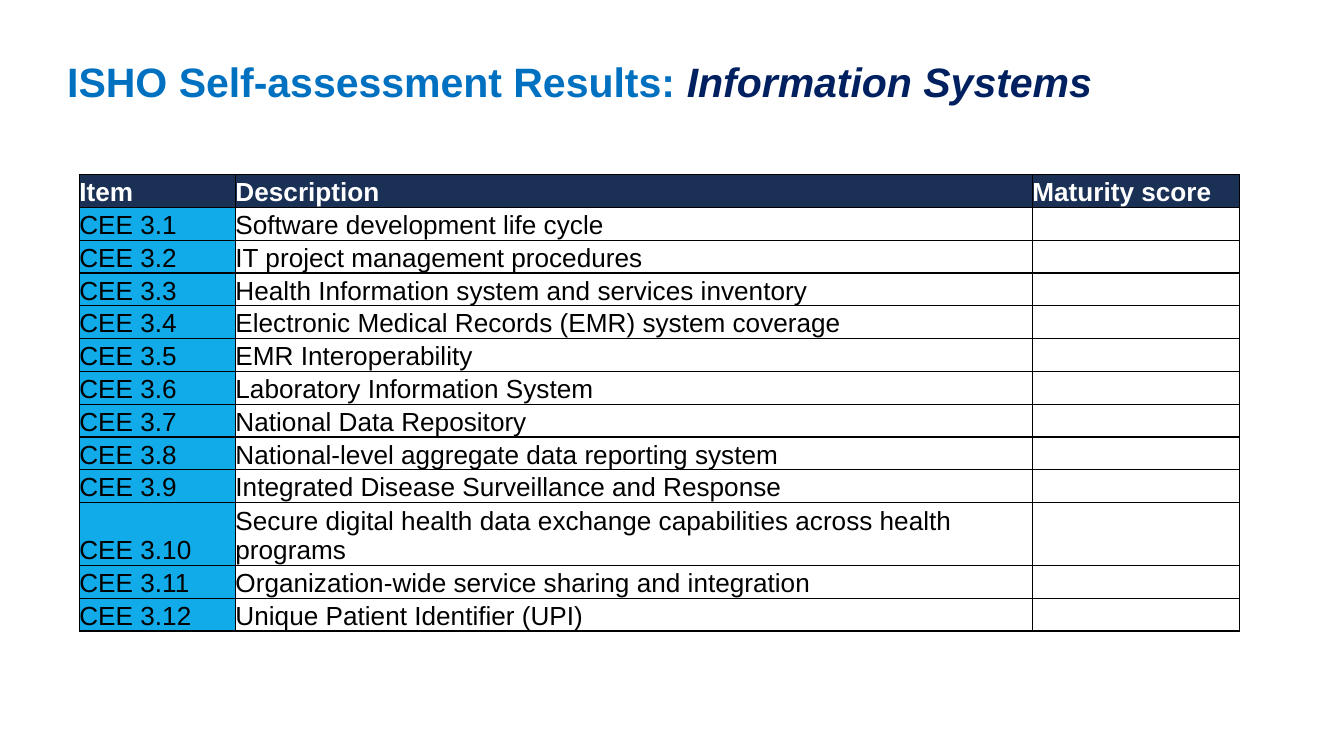
from dataclasses import dataclass

from lxml.etree import SubElement
from pptx import Presentation
from pptx.dml.color import RGBColor
from pptx.enum.text import MSO_ANCHOR
from pptx.oxml.ns import qn
from pptx.util import Cm, Pt


@dataclass(frozen=True)
class Theme:
    font: str = "Arial"
    title_size: int = 22
    table_size: int = 14
    title: str = "0070C0"
    topic: str = "002060"
    header: str = "1A3055"
    item: str = "11ABE9"
    white: str = "FFFFFF"
    black: str = "000000"
    border: float = 0.75
    outer_border: float = 1


THEME = Theme()
HEADINGS = ("Item", "Description", "Maturity score")
DESCRIPTIONS = (
    "Software development life cycle",
    "IT project management procedures",
    "Health Information system and services inventory",
    "Electronic Medical Records (EMR) system coverage",
    "EMR Interoperability",
    "Laboratory Information System",
    "National Data Repository",
    "National-level aggregate data reporting system",
    "Integrated Disease Surveillance and Response",
    "Secure digital health data exchange capabilities across health programs",
    "Organization-wide service sharing and integration",
    "Unique Patient Identifier (UPI)",
)
COLUMN_WIDTHS = (2.95, 15.06, 3.91)
ROW_HEIGHT = 0.62


def set_font(font, size, color, bold):
    font.name = THEME.font
    font.size = Pt(size)
    font.bold = bold
    font.color.rgb = RGBColor.from_string(color)


def add_title(slide, title, topic):
    box = slide.shapes.add_textbox(Cm(1.09), Cm(-0.1), Cm(19.91), Cm(3.25))
    frame = box.text_frame
    frame.word_wrap = True
    frame.vertical_anchor = MSO_ANCHOR.MIDDLE
    frame.margin_left = frame.margin_right = Cm(0.18)
    frame.margin_top = frame.margin_bottom = Cm(0.1)
    para = frame.paragraphs[0]
    for text, color, italic in ((title, THEME.title, False), (topic, THEME.topic, True)):
        span = para.add_run()
        span.text = text
        set_font(span.font, THEME.title_size, color, True)
        span.font.italic = italic


def add_borders(cell, widths):
    properties = cell._tc.get_or_add_tcPr()
    for side, width in zip("LRTB", widths):
        line = SubElement(properties, qn(f"a:ln{side}"), w=str(Pt(width)))
        fill = SubElement(line, qn("a:solidFill"))
        SubElement(fill, qn("a:srgbClr"), val=THEME.black)


def fill_cell(cell, text, background, color, bold, borders):
    cell.margin_left = cell.margin_right = cell.margin_top = cell.margin_bottom = 0
    cell.vertical_anchor = MSO_ANCHOR.BOTTOM
    add_borders(cell, borders)
    cell.fill.solid()
    cell.fill.fore_color.rgb = RGBColor.from_string(background)
    para = cell.text_frame.paragraphs[0]
    if text:
        para.text = text
    set_font(para.font, THEME.table_size, color, bold)
    if not text:
        SubElement(para._p, qn("a:endParaRPr"), sz=str(THEME.table_size * 100))


def add_score_table(slide, rows):
    frame = slide.shapes.add_table(
        len(rows), len(COLUMN_WIDTHS), Cm(1.5), Cm(3.3),
        Cm(sum(COLUMN_WIDTHS)), Cm(ROW_HEIGHT * len(rows)),
    )
    table = frame.table
    for column, width in zip(table.columns, COLUMN_WIDTHS):
        column.width = Cm(width)
    for row_index, texts in enumerate(rows):
        table.rows[row_index].height = Cm(ROW_HEIGHT)
        is_header = row_index == 0
        is_last = row_index == len(rows) - 1
        for column_index, text in enumerate(texts):
            is_item = column_index == 0
            body_fill = THEME.item if is_item else THEME.white
            left = THEME.outer_border if is_item else THEME.border
            bottom = THEME.outer_border if is_last else THEME.border
            fill_cell(
                table.cell(row_index, column_index),
                text,
                THEME.header if is_header else body_fill,
                THEME.white if is_header else THEME.black,
                is_header,
                (left, THEME.border, THEME.border, bottom),
            )


def main():
    deck = Presentation()
    deck.slide_width = Cm(25.4)
    deck.slide_height = Cm(14.29)
    page = deck.slides.add_slide(deck.slide_layouts[6])
    add_title(page, "ISHO Self-assessment Results: ", "Information Systems")
    items = [(f"CEE 3.{number}", text, "") for number, text in enumerate(DESCRIPTIONS, 1)]
    add_score_table(page, [HEADINGS, *items])
    deck.save("out.pptx")


if __name__ == "__main__":
    main()
